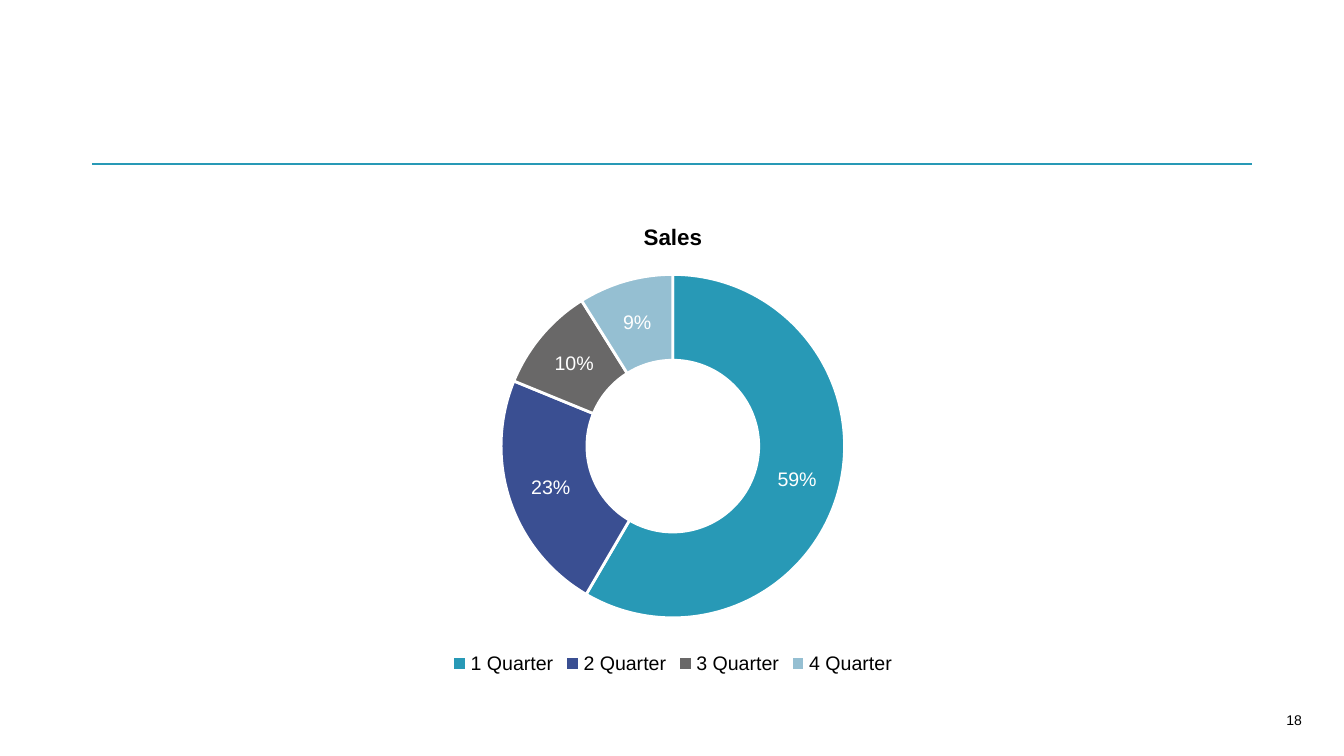
from dataclasses import dataclass

from lxml import etree
from pptx import Presentation
from pptx.chart.data import CategoryChartData
from pptx.dml.color import RGBColor
from pptx.enum.chart import XL_CHART_TYPE, XL_LEGEND_POSITION
from pptx.enum.shapes import MSO_CONNECTOR
from pptx.enum.text import MSO_ANCHOR, PP_ALIGN
from pptx.oxml import parse_xml
from pptx.oxml.ns import nsdecls, qn
from pptx.util import Pt

DOUGHNUT = XL_CHART_TYPE.DOUGHNUT
LEGEND_BOTTOM = XL_LEGEND_POSITION.BOTTOM
STRAIGHT = MSO_CONNECTOR.STRAIGHT
MIDDLE = MSO_ANCHOR.MIDDLE
RIGHT = PP_ALIGN.RIGHT

TEAL = RGBColor(0x28, 0x99, 0xB6)
NAVY = RGBColor(0x3A, 0x4F, 0x92)
GRAY = RGBColor(0x69, 0x68, 0x68)
SKY = RGBColor(0x95, 0xBF, 0xD2)
BLACK = RGBColor(0, 0, 0)
WHITE = RGBColor(0xFF, 0xFF, 0xFF)
FONT_NAME = "Arial"
BLANK_LAYOUT = 6


@dataclass(frozen=True)
class Quarter:
    name: str
    share: int
    color: RGBColor


QUARTERS = [
    Quarter("1 Quarter", 59, TEAL),
    Quarter("2 Quarter", 23, NAVY),
    Quarter("3 Quarter", 10, GRAY),
    Quarter("4 Quarter", 9, SKY),
]


def style_font(font, size: float, color: RGBColor, bold: bool = False) -> None:
    font.name = FONT_NAME
    font.size = Pt(size)
    font.bold = bold
    font.color.rgb = color


def add_header_rule(page) -> None:
    rule = page.shapes.add_connector(STRAIGHT, Pt(49.5), Pt(87.75), Pt(670.5), Pt(87.75))
    rule.line.color.rgb = TEAL
    rule.line.width = Pt(1)
    etree.SubElement(rule._element.spPr, qn("a:effectLst"))


def add_page_number(page, number: str) -> None:
    box = page.shapes.add_textbox(Pt(535.5), Pt(375), Pt(162), Pt(21.6))
    frame = box.text_frame
    frame.word_wrap = True
    frame.vertical_anchor = MIDDLE
    frame.margin_left = Pt(5)
    frame.margin_right = Pt(0)
    frame.margin_top = frame.margin_bottom = Pt(2.7)
    para = frame.paragraphs[0]
    para.alignment = RIGHT
    span = para.add_run()
    span.text = number
    style_font(span.font, 7.5, BLACK)


def place_plot(chart) -> None:
    layout = parse_xml(
        f'<c:layout {nsdecls("c")}><c:manualLayout>'
        '<c:layoutTarget val="inner"/><c:xMode val="edge"/><c:yMode val="edge"/>'
        '<c:x val="0.3"/><c:y val="0.15"/><c:w val="0.4"/><c:h val="0.72"/>'
        "</c:manualLayout></c:layout>"
    )
    plot_area = chart._chartSpace.chart.plotArea
    for automatic in plot_area.findall(qn("c:layout")):
        plot_area.remove(automatic)
    plot_area.insert(0, layout)


def add_sales_chart(page, quarters: list[Quarter]) -> None:
    chart_data = CategoryChartData()
    chart_data.categories = [quarter.name for quarter in quarters]
    chart_data.add_series("Series 1", [quarter.share for quarter in quarters])
    chart = page.shapes.add_chart(
        DOUGHNUT, Pt(127.5), Pt(108.7), Pt(466), Pt(255.6), chart_data
    ).chart
    style_font(chart.font, 10.5, BLACK)

    chart.has_title = True
    span = chart.chart_title.text_frame.paragraphs[0].add_run()
    span.text = "Sales"
    style_font(span.font, 12, BLACK, bold=True)
    chart.chart_title.include_in_layout = False

    chart.has_legend = True
    chart.legend.position = LEGEND_BOTTOM
    chart.legend.include_in_layout = False
    style_font(chart.legend.font, 10.5, BLACK)

    plot = chart.plots[0]
    plot.vary_by_categories = True
    plot._element.find(qn("c:holeSize")).set("val", "75")
    plot.has_data_labels = True
    labels = plot.data_labels
    labels.show_value = True
    labels.show_percentage = False
    labels.number_format = '0"%"'
    labels.number_format_is_linked = False
    style_font(labels.font, 10.5, WHITE)
    for index, quarter in enumerate(quarters):
        slice_format = plot.series[0].points[index].format
        slice_format.fill.solid()
        slice_format.fill.fore_color.rgb = quarter.color
        slice_format.line.color.rgb = WHITE
        slice_format.line.width = Pt(1.5)
    place_plot(chart)


def main() -> None:
    deck = Presentation()
    deck.slide_width = Pt(720)
    deck.slide_height = Pt(405)
    page = deck.slides.add_slide(deck.slide_layouts[BLANK_LAYOUT])
    add_header_rule(page)
    add_page_number(page, "18")
    add_sales_chart(page, QUARTERS)
    deck.save("out.pptx")


if __name__ == "__main__":
    main()
